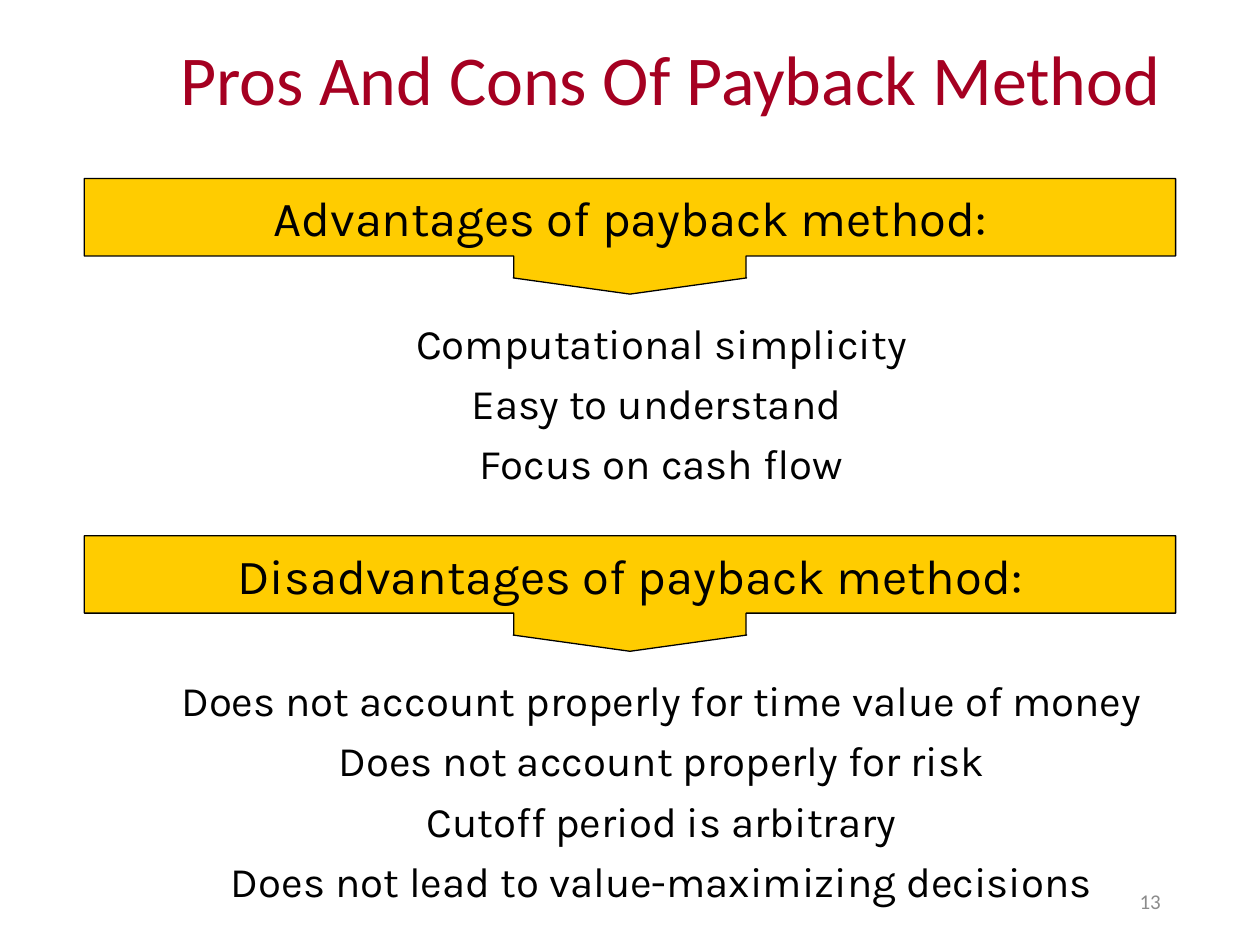
from pptx import Presentation
from pptx.dml.color import RGBColor as Rgb
from pptx.enum.shapes import MSO_SHAPE as Form
from pptx.enum.text import MSO_ANCHOR as Anchor, PP_ALIGN as Align
from pptx.util import Cm, Pt

HUES = {"red": "A50021", "gold": "FFCC00", "black": "000000", "gray": "8C8C8C"}


def write(frame, text, size=24, font="Karla", hue="black", align=Align.CENTER,
          gap=0, lead=None, indent=0):
    for i, line in enumerate(text.split("\n")):
        para = frame.add_paragraph() if i else frame.paragraphs[0]
        para.alignment = align
        para.line_spacing = lead
        if i:
            para.space_before = Pt(gap)
        if indent:
            para._p.get_or_add_pPr().set("marL", str(Cm(indent)))
        run = para.add_run()
        run.text = line
        run.font.size, run.font.name = Pt(size), font
        run.font.color.rgb = Rgb.from_string(HUES[hue])


class Deck:
    """Holds the style and the current slide."""

    def __init__(self):
        self.file = Presentation()
        self.file.slide_width, self.file.slide_height = Cm(25.4), Cm(19.05)
        self.slide = self.file.slides.add_slide(self.file.slide_layouts[6])

    def label(self, box, text, anchor=Anchor.MIDDLE, pad=0.13, **form):
        frame = self.slide.shapes.add_textbox(*map(Cm, box)).text_frame
        frame.word_wrap = True
        frame.vertical_anchor = anchor
        frame.margin_top = frame.margin_bottom = Cm(pad)
        write(frame, text, **form)

    def banner(self, top, text):
        shape = self.slide.shapes.add_shape(
            Form.DOWN_ARROW_CALLOUT, Cm(1.7), Cm(top), Cm(22), Cm(2.33))
        for i, value in enumerate((2.01, 1.01, 0.14, 0.67)):
            shape.adjustments[i] = value
        shape.shadow.inherit = False
        shape.fill.solid()
        shape.fill.fore_color.rgb = Rgb.from_string(HUES["gold"])
        shape.line.color.rgb = Rgb.from_string(HUES["black"])
        shape.line.width = Pt(0.75)
        write(shape.text_frame, text, size=28)

    def points(self, top, lines):
        self.label((1.9, top, 21.6, 1.17 * len(lines)), "\n".join(lines),
                   anchor=Anchor.TOP, pad=0, gap=5.6, indent=1.27)


def main():
    deck = Deck()
    deck.label((3.38, 0.4, 20.62, 2.54), "Pros And Cons Of Payback Method",
               size=40, font="Calibri", hue="red", align=Align.LEFT, lead=0.9)
    parts = (
        (3.6, "Advantages of payback method:",
         ("Computational simplicity", "Easy to understand ",
          "Focus on cash flow")),
        (10.8, "Disadvantages of payback method:",
         ("Does not account properly for time value of money",
          "Does not account properly for risk",
          "Cutoff period is arbitrary",
          "Does not lead to value-maximizing decisions")),
    )
    for top, head, lines in parts:
        deck.banner(top, head)
        deck.points(top + 2.8, lines)
    deck.label((17.93, 17.65, 5.72, 1.02), "13", size=12, font="Calibri",
               hue="gray", align=Align.RIGHT)
    deck.file.save("out.pptx")


if __name__ == "__main__":
    main()
